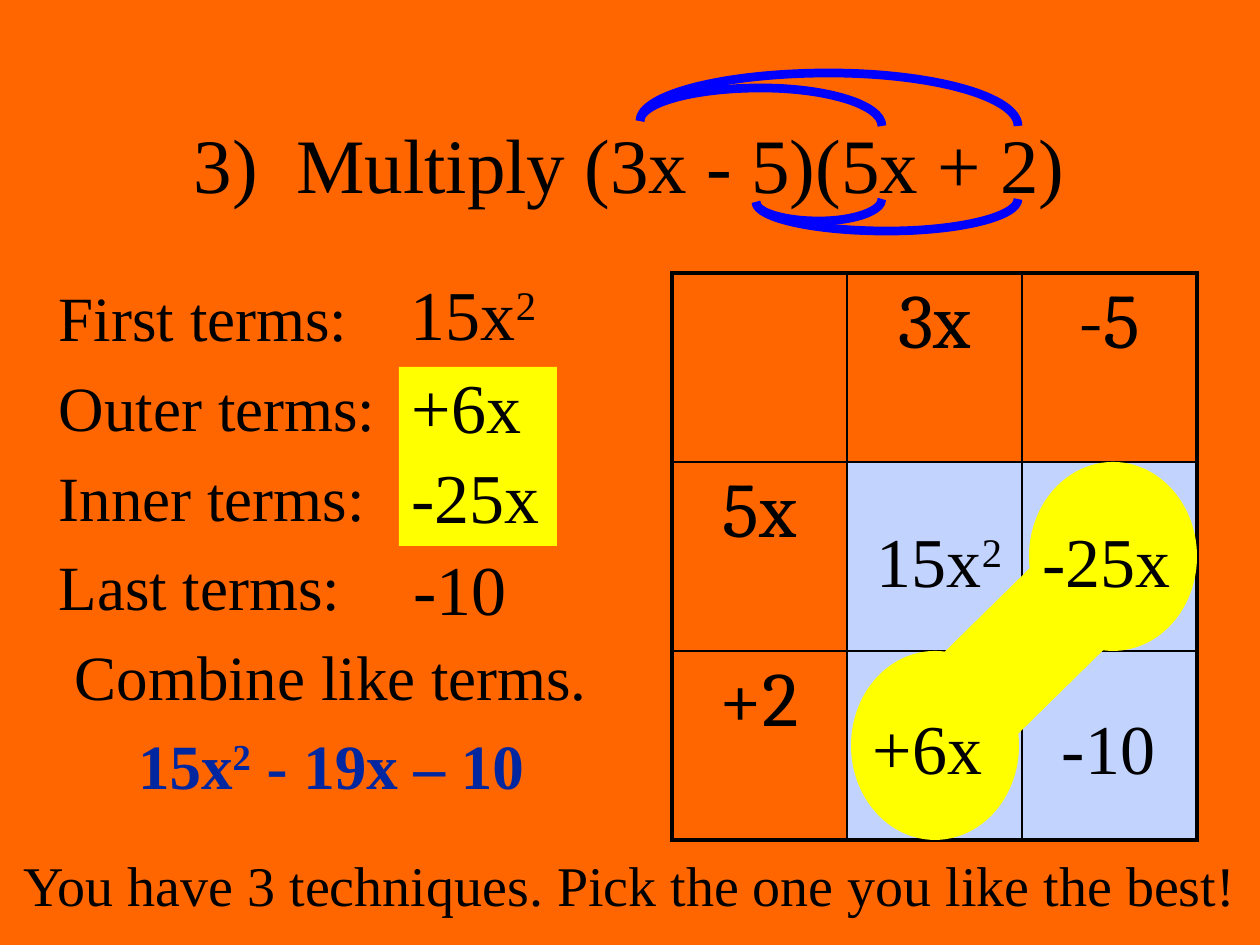
import math

from lxml import etree
from pptx import Presentation
from pptx import util as u
from pptx.dml.color import RGBColor
from pptx.enum import shapes, text
from pptx.oxml.ns import qn

SCALE = 914400 / 126
ORANGE, YELLOW, PALE_BLUE = "FF6600", "FFFF00", "C2D3FE"
BLACK, NAVY, BLUE = "000000", "00279F", "0000FF"
SERIF, TABLE_FONT = "Times New Roman", "Cambria"
LEFT, CENTER = text.PP_ALIGN.LEFT, text.PP_ALIGN.CENTER
INSET = 6
TABLE_LEFT, TABLE_TOP, CELL_WIDTH, CELL_HEIGHT = 672, 273, 175, 189
CURVE = 4 / 3 * (math.sqrt(2) - 1)


def px(length):
    return u.Emu(round(length * SCALE))


def color(hex_code):
    return RGBColor.from_string(hex_code)


def write(paragraph, pieces, size, align=LEFT, font=SERIF, ink=BLACK, bold=False):
    """Fill a paragraph with pieces of text; every second piece is superscript."""
    paragraph.alignment = align
    for index, piece in enumerate(pieces):
        run = paragraph.add_run()
        run.text = piece
        run.font.name, run.font.size, run.font.bold = font, u.Pt(size), bold
        run.font.color.rgb = color(ink)
        if index % 2:
            run.font._element.set("baseline", "30000")


def add_frame(slide, x, y, width, height, grow=False, wrap=True):
    frame = slide.shapes.add_textbox(px(x), px(y), px(width), px(height)).text_frame
    frame.word_wrap = wrap
    if grow:
        frame.auto_size = text.MSO_AUTO_SIZE.SHAPE_TO_FIT_TEXT
    frame.margin_left = frame.margin_right = px(INSET)
    frame.margin_top = frame.margin_bottom = px(INSET)
    return frame


def add_label(slide, x, y, width, pieces, align=CENTER, size=40, height=92, wrap=True):
    frame = add_frame(slide, x, y, width, height, grow=True, wrap=wrap)
    write(frame.paragraphs[0], pieces, size, align)


def add_title(slide):
    frame = add_frame(slide, 94, 110, 1071, 105)
    frame.vertical_anchor = text.MSO_ANCHOR.MIDDLE
    write(frame.paragraphs[0], ["3)  Multiply (3x - 5)(5x + 2)"], 44, CENTER)


def add_steps(slide):
    steps = [
        (["First terms:"], LEFT, BLACK, False),
        (["Outer terms:"], LEFT, BLACK, False),
        (["Inner terms:"], LEFT, BLACK, False),
        (["Last terms:"], LEFT, BLACK, False),
        (["Combine like terms."], CENTER, BLACK, False),
        (["15x", "2", " - 19x – 10"], CENTER, NAVY, True),
    ]
    frame = add_frame(slide, 53, 273, 556, 567)
    for index, (pieces, align, ink, bold) in enumerate(steps):
        paragraph = frame.add_paragraph() if index else frame.paragraphs[0]
        paragraph.space_before = u.Pt(8)
        write(paragraph, pieces, 36, align, ink=ink, bold=bold)
        properties = paragraph._p.get_or_add_pPr()
        properties.set("marL", str(px(47)))
        properties.set("indent", str(px(-47)))


def set_borders(cell, widths):
    """Draw the left, right, top and bottom borders with widths in points."""
    properties = cell._tc.get_or_add_tcPr()
    for index, (side, width) in enumerate(zip(("lnL", "lnR", "lnT", "lnB"), widths)):
        line = etree.Element(qn(f"a:{side}"), w=str(u.Pt(width)))
        fill = etree.SubElement(line, qn("a:solidFill"))
        etree.SubElement(fill, qn("a:srgbClr"), val=BLACK)
        properties.insert(index, line)


def add_product_table(slide):
    rows = [["", "3x", "-5"], ["5x", "", ""], ["+2", "", ""]]
    table = slide.shapes.add_table(
        3, 3, px(TABLE_LEFT), px(TABLE_TOP), px(3 * CELL_WIDTH), px(3 * CELL_HEIGHT)
    ).table
    table.first_row = table.horz_banding = False
    for row, values in enumerate(rows):
        table.rows[row].height = px(CELL_HEIGHT)
        table.columns[row].width = px(CELL_WIDTH)
        for column, value in enumerate(values):
            cell = table.cell(row, column)
            cell.margin_left = cell.margin_right = px(INSET)
            cell.margin_top = cell.margin_bottom = px(INSET)
            if row and column:
                cell.fill.solid()
                cell.fill.fore_color.rgb = color(PALE_BLUE)
            else:
                cell.fill.background()
            if value:
                paragraph = cell.text_frame.paragraphs[0]
                paragraph.space_before = u.Pt(10)
                write(paragraph, [value], 44, CENTER, TABLE_FONT)
            outer = (column == 0, column == 2, row == 0, row == 2)
            set_borders(cell, [2.25 if edge else 1 for edge in outer])


def add_highlight(parent, kind, x, y, width, height, rotation=0):
    shape = parent.shapes.add_shape(kind, px(x), px(y), px(width), px(height))
    shape.shadow.inherit = False
    shape.fill.solid()
    shape.fill.fore_color.rgb = color(YELLOW)
    shape.line.fill.background()
    shape.rotation = rotation


def add_like_terms_band(slide):
    group = slide.shapes.add_group_shape()
    oval, bar = shapes.MSO_SHAPE.OVAL, shapes.MSO_SHAPE.RECTANGLE
    add_highlight(group, oval, 851, TABLE_TOP + 2 * CELL_HEIGHT, 168, CELL_HEIGHT)
    add_highlight(group, oval, 1029, TABLE_TOP + CELL_HEIGHT, 168, CELL_HEIGHT)
    add_highlight(group, bar, 882, 593, 290, 110, 315.5)


def bend_segments(shape):
    """Turn every three straight segments into one cubic curve."""
    segments = list(shape._element.iter(qn("a:lnTo")))
    for first, second, third in zip(*[iter(segments)] * 3):
        curve = etree.Element(qn("a:cubicBezTo"))
        first.addprevious(curve)
        for segment in (first, second, third):
            curve.append(segment[0])
            segment.getparent().remove(segment)


def add_arc(slide, left, right, left_y, right_y, peak):
    """Draw half an ellipse from its right end over the peak to its left end."""
    center = (left + right) / 2
    reach = CURVE * (right - left) / 2
    points = [
        (right, right_y), (right, right_y + CURVE * (peak - right_y)),
        (center + reach, peak), (center, peak), (center - reach, peak),
        (left, left_y + CURVE * (peak - left_y)), (left, left_y),
    ]
    start, *rest = [(px(x), px(y)) for x, y in points]
    builder = slide.shapes.build_freeform(*start)
    builder.add_line_segments(rest, close=False)
    arc = builder.convert_to_shape()
    bend_segments(arc)
    arc.shadow.inherit = False
    arc.fill.background()
    arc.line.color.rgb = color(BLUE)
    arc.line.width = u.Pt(5)


def main():
    deck = Presentation()
    deck.slide_width, deck.slide_height = px(1260), px(945)
    slide = deck.slides.add_slide(deck.slide_layouts[6])
    slide.background.fill.solid()
    slide.background.fill.fore_color.rgb = color(ORANGE)

    add_title(slide)
    add_steps(slide)
    add_product_table(slide)
    add_label(slide, 871, 512, 141, ["15x", "2"], LEFT)
    add_like_terms_band(slide)
    add_label(slide, 857, 698, 141, ["+6x"])
    add_label(slide, 1036, 512, 141, ["-25x"])
    add_label(slide, 1038, 698, 141, ["-10"])
    add_label(slide, 17, 845, 1226,
              ["You have 3 techniques. Pick the one you like the best!"],
              LEFT, size=32, height=76, wrap=False)

    for left, right, left_y, right_y, peak in [
        (640, 882, 121, 126, 88), (640, 1018, 121, 126, 73),
        (756, 882, 202, 199, 221), (756, 1018, 202, 199, 231),
    ]:
        add_arc(slide, left, right, left_y, right_y, peak)

    add_label(slide, 405, 265, 146, ["15x", "2"], LEFT)
    add_highlight(slide, shapes.MSO_SHAPE.RECTANGLE, 399, 367, 158, 179)
    add_label(slide, 405, 357, 123, ["+6x"])
    add_label(slide, 405, 448, 141, ["-25x"])
    add_label(slide, 405, 539, 110, ["-10"])
    deck.save("out.pptx")


if __name__ == "__main__":
    main()
